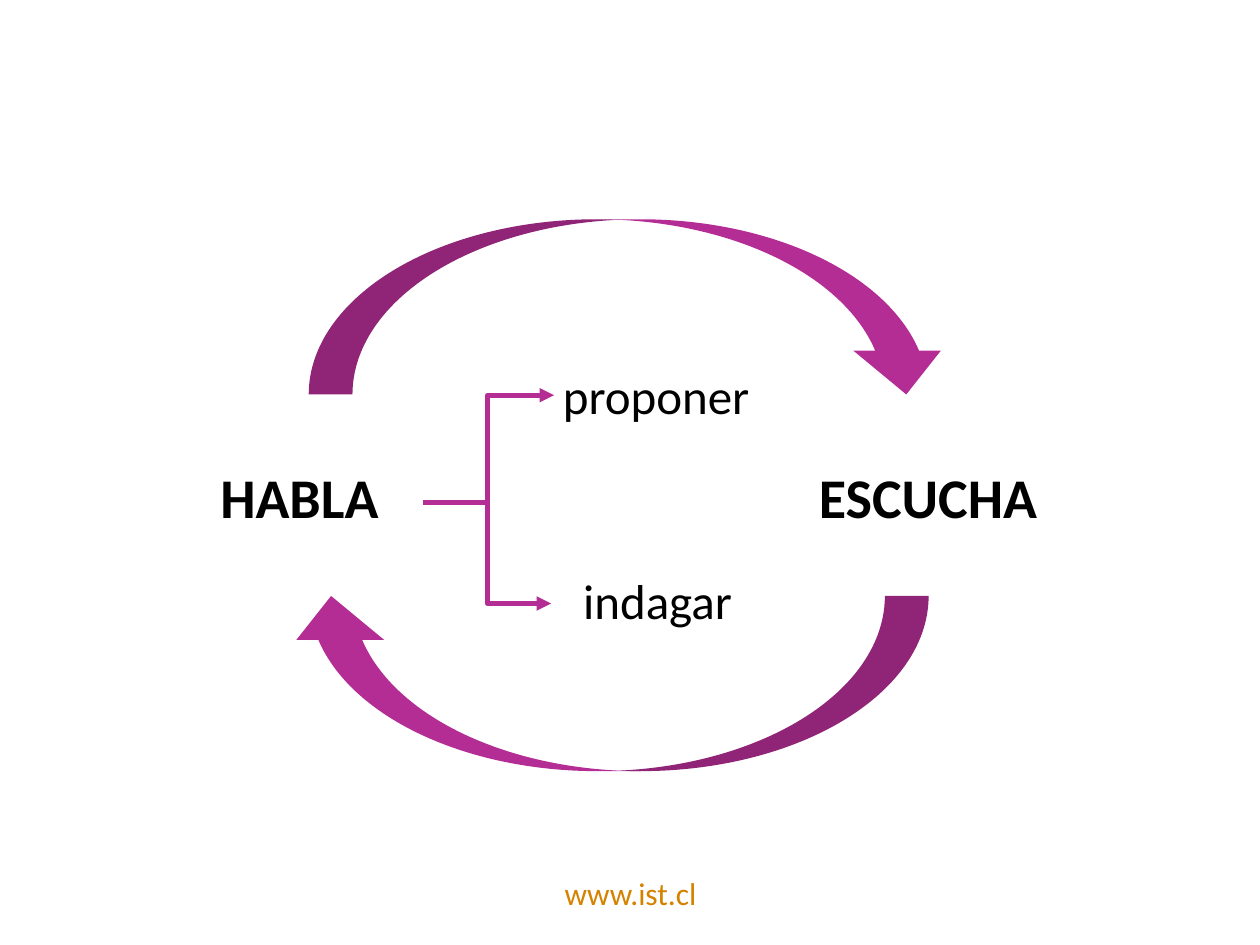
from dataclasses import dataclass

from lxml.etree import SubElement
from pptx import Presentation
from pptx.dml.color import RGBColor
from pptx.enum.shapes import MSO_CONNECTOR as CONN, MSO_SHAPE as SHAPE
from pptx.enum.text import MSO_AUTO_SIZE as FIT, PP_ALIGN as ALIGN
from pptx.oxml.ns import qn
from pptx.util import Inches, Pt

COLS, ROWS = 100, 75
SLIDE_W, SLIDE_H = Inches(10), Inches(7.5)
COLORS = {"magenta": "B42D94", "text": "000000", "link": "D58200"}
FONT = "Calibri"


@dataclass
class Label:
    text: str
    col: float
    row: float
    cols: float
    rows: float
    size: int
    bold: bool = False
    color: str = "text"
    align: ALIGN = ALIGN.LEFT
    wrap: bool = False


@dataclass
class Arc:
    col: float
    row: float
    rotation: int = 0


@dataclass
class Branch:
    start: tuple[float, float]
    end: tuple[float, float]
    preset: str
    rotation: int = 0


LABELS = [
    Label("www.ist.cl", 35.9, 68.9, 28.3, 4, 18, color="link", align=ALIGN.CENTER, wrap=True),
    Label("HABLA", 16.5, 36.2, 14.7, 6.4, 32, bold=True),
    Label("ESCUCHA", 64, 36.2, 19.5, 6.4, 32, bold=True),
    Label("proponer", 43.7, 28.5, 17, 5.7, 28),
    Label("indagar", 45.3, 44.8, 13.9, 5.7, 28),
]
ARC_COLS, ARC_ROWS = 50.9, 13.9
ARCS = [Arc(24.5, 17.4), Arc(22.8, 47.3, 180)]
BRANCHES = [
    Branch((33.6, 39.9), (43.75, 47.9), "bentConnector3"),
    Branch((45.6, 38.3), (37.05, 33), "bentConnector2", 90),
]


def x(col: float) -> int:
    return round(SLIDE_W * col / COLS)


def y(row: float) -> int:
    return round(SLIDE_H * row / ROWS)


def rgb(name: str) -> RGBColor:
    return RGBColor.from_string(COLORS[name])


def draw_label(s, label: Label) -> None:
    sp = s.shapes.add_textbox(x(label.col), y(label.row), x(label.cols), y(label.rows))
    tf = sp.text_frame
    tf.word_wrap = label.wrap
    tf.auto_size = FIT.SHAPE_TO_FIT_TEXT
    p = tf.paragraphs[0]
    p.alignment = label.align
    r = p.add_run()
    r.text = label.text
    r.font.name = FONT
    r.font.size = Pt(label.size)
    r.font.bold = label.bold
    r.font.color.rgb = rgb(label.color)


def draw_arc(s, arc: Arc) -> None:
    sp = s.shapes.add_shape(
        SHAPE.CURVED_DOWN_ARROW, x(arc.col), y(arc.row), x(ARC_COLS), y(ARC_ROWS)
    )
    sp.rotation = arc.rotation
    sp.shadow.inherit = False
    sp.fill.solid()
    sp.fill.fore_color.rgb = rgb("magenta")
    sp.line.fill.background()


def draw_branch(s, branch: Branch) -> None:
    (col1, row1), (col2, row2) = branch.start, branch.end
    cxn = s.shapes.add_connector(CONN.ELBOW, x(col1), y(row1), x(col2), y(row2))
    cxn.line.color.rgb = rgb("magenta")
    cxn.line.width = Pt(2.75)
    sp_pr = cxn._element.spPr
    sp_pr.find(qn("a:prstGeom")).set("prst", branch.preset)
    sp_pr.find(qn("a:xfrm")).set("rot", str(branch.rotation * 60000))
    SubElement(sp_pr.find(qn("a:ln")), qn("a:tailEnd"), type="triangle")
    SubElement(sp_pr, qn("a:effectLst"))


def main() -> None:
    prs = Presentation()
    prs.slide_width, prs.slide_height = SLIDE_W, SLIDE_H
    s = prs.slides.add_slide(prs.slide_layouts[6])
    for label in LABELS:
        draw_label(s, label)
    for arc in ARCS:
        draw_arc(s, arc)
    for branch in BRANCHES:
        draw_branch(s, branch)
    prs.save("out.pptx")


if __name__ == "__main__":
    main()
